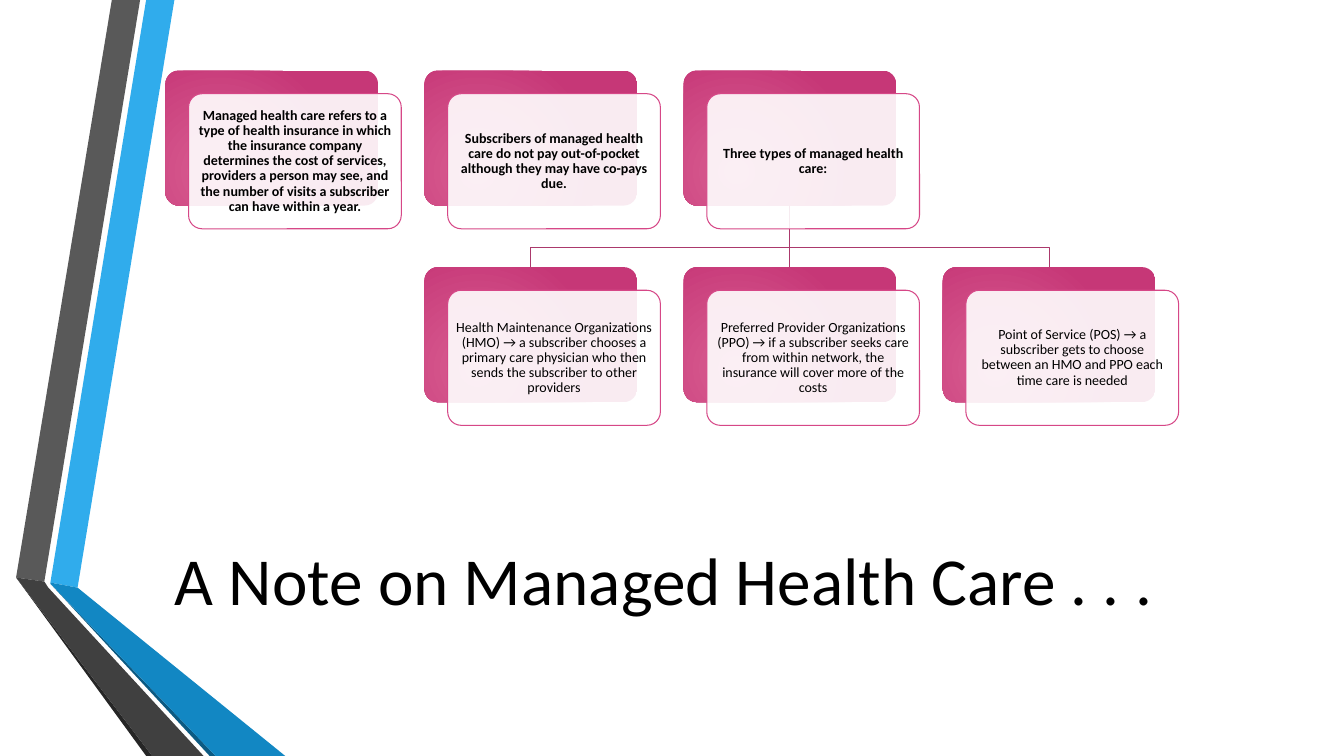
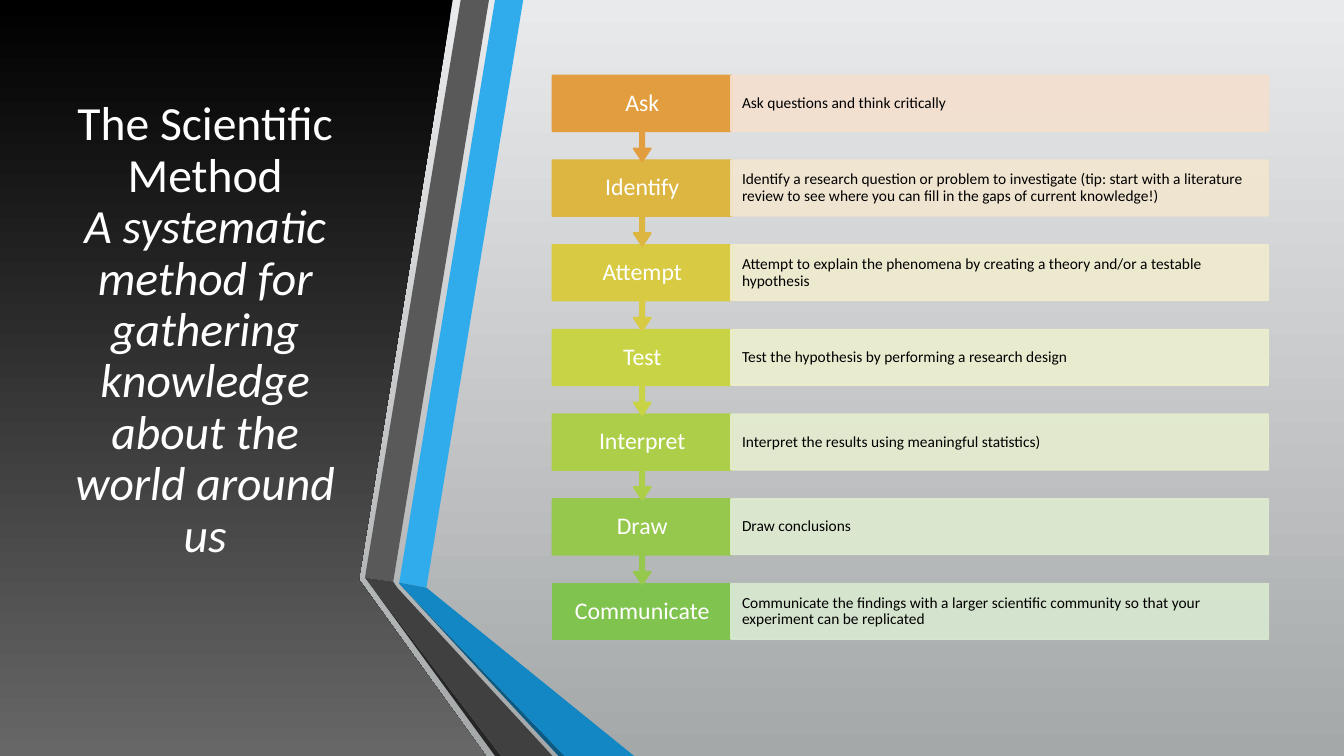
from copy import deepcopy
from dataclasses import dataclass

from lxml import etree
from pptx import Presentation
from pptx import util as u
from pptx.dml.color import RGBColor
from pptx.enum import shapes, text
from pptx.oxml import ns

FONT = "Calibri"
COLORS = {
    "black": "000000",
    "white": "FFFFFF",
    "blue": "30ACEC",
    "blue_dark": "1287C3",
    "blue_deep": "0C5A82",
    "gray": "595959",
    "gray_dark": "404040",
    "gray_deep": "262626",
    "panel_end": "676767",
    "page_top": "E9EAEB",
    "page_bottom": "A5A8A9",
    "pink_light": "D95F92",
    "pink_dark": "C63777",
    "pink_line": "D64787",
    "link": "AB396C",
}
Point = tuple[float, float]


@dataclass(frozen=True)
class Ribbon:
    color: str
    points: tuple[Point, ...]


@dataclass(frozen=True)
class Card:
    column: int
    row: int
    words: str


@dataclass(frozen=True)
class Step:
    name: str
    words: str
    color: str
    tint: str


@dataclass(frozen=True)
class Span:
    words: str
    italic: bool = False


RIBBONS = (
    Ribbon("blue", ((0.5, 5.78), (0.77, 5.83), (1.73, 0), (1.45, 0))),
    Ribbon("gray", ((1.39, 0), (1.11, 0), (0.16, 5.73), (0.44, 5.77))),
    Ribbon("gray_deep", ((0.16, 5.73), (1.45, 7.5), (1.51, 7.5))),
    Ribbon("blue_deep", ((0.5, 5.79), (2.08, 7.5), (2.14, 7.5))),
    Ribbon("blue_dark", ((0.5, 5.79), (2.14, 7.5), (2.83, 7.5), (0.77, 5.83), (0.5, 5.78))),
    Ribbon("gray_dark", ((2.02, 7.5), (0.48, 5.83), (0.44, 5.77), (0.16, 5.73), (1.51, 7.5))),
)
PANEL = ((0, 0), (4.49, 0), (3.56, 5.75), (4.82, 7.5), (0, 7.5))
RIBBON_SHIFT = 3.46

CARD_WIDTH, CARD_HEIGHT, CARD_OFFSET = 2.11, 1.34, 0.23
CARD_LEFT, CARD_TOP = 1.64, 0.7
COLUMN_PITCH, ROW_PITCH = 2.57, 1.95
BEND_Y = 2.46
CARDS = (
    Card(0, 0, "Managed health care refers to a type of health insurance in which the insurance "
               "company determines the cost of services, providers a person may see, and the "
               "number of visits a subscriber can have within a year."),
    Card(1, 0, "Subscribers of managed health care do not pay out-of-pocket although they may "
               "have co-pays due."),
    Card(2, 0, "Three types of managed health care:"),
    Card(1, 1, "Health Maintenance Organizations (HMO) → a subscriber chooses a primary care "
               "physician who then sends the subscriber to other providers"),
    Card(2, 1, "Preferred Provider Organizations (PPO) → if a subscriber seeks care from within "
               "network, the insurance will cover more of the costs"),
    Card(3, 1, "Point of Service (POS) → a subscriber gets to choose between an HMO and PPO each "
               "time care is needed"),
)

STEP_LEFT, STEP_TOP, STEP_PITCH = 5.48, 0.75, 0.84
STEP_WIDTH, STEP_HEIGHT, CALLOUT_HEIGHT = 1.78, 0.55, 0.85
DETAIL_LEFT, DETAIL_WIDTH = 7.25, 5.33
STEPS = (
    Step("Ask", "Ask questions and think critically", "E29D3E", "F4DFCE"),
    Step("Identify", "Identify a research question or problem to investigate (tip: start with a "
         "literature review to see where you can fill in the gaps of current knowledge!)",
         "DDB541", "F2E6CF"),
    Step("Attempt", "Attempt to explain the phenomena by creating a theory and/or a testable "
         "hypothesis", "D8CB43", "F1ECCF"),
    Step("Test", "Test the hypothesis by performing a research design", "C8D346", "EDEFCF"),
    Step("Interpret", "Interpret the results using meaningful statistics)", "ADCE49", "E5EDCF"),
    Step("Draw", "Draw conclusions", "95C84C", "DEEBD0"),
    Step("Communicate", "Communicate the findings with a larger scientific community so that your "
         "experiment can be replicated", "80C34F", "D8E9D0"),
)


def rgb(color: str) -> RGBColor:
    return RGBColor.from_string(COLORS.get(color, color))


def paint(fill, color: str) -> None:
    fill.solid()
    fill.fore_color.rgb = rgb(color)


def paint_gradient(fill, first: str, last: str) -> None:
    fill.gradient()
    fill.gradient_angle = 270
    for stop, color in zip(fill.gradient_stops, (first, last)):
        stop.color.rgb = rgb(color)


def make_radial(shape) -> None:
    gradient = shape.element.spPr.find(ns.qn("a:gradFill"))
    gradient.remove(gradient.find(ns.qn("a:lin")))
    radial = etree.SubElement(gradient, ns.qn("a:path"), {"path": "circle"})
    focus = {"l": "50000", "t": "100000", "r": "100000", "b": "50000"}
    etree.SubElement(radial, ns.qn("a:fillToRect"), focus)


def make_translucent(element) -> None:
    for color in element.iter(ns.qn("a:srgbClr")):
        etree.SubElement(color, ns.qn("a:alpha"), {"val": "90000"})


def draw_outline(page, points: tuple[Point, ...], closed: bool = True):
    start, *rest = [(u.Inches(x), u.Inches(y)) for x, y in points]
    builder = page.shapes.build_freeform(*start)
    builder.add_line_segments(rest, close=closed)
    outline = builder.convert_to_shape()
    outline.shadow.inherit = False
    return outline


def draw_ribbons(page, shift: float = 0) -> None:
    for ribbon in RIBBONS:
        band = draw_outline(page, tuple((x + shift, y) for x, y in ribbon.points))
        paint(band.fill, ribbon.color)
        band.line.fill.background()


def draw_box(page, preset, left: float, top: float, width: float, height: float):
    box = page.shapes.add_shape(
        preset, u.Inches(left), u.Inches(top), u.Inches(width), u.Inches(height))
    box.shadow.inherit = False
    return box


def add_span(para, words: str, size: int, color: str, bold: bool = False, italic: bool = False):
    span = para.add_run()
    span.text = words
    span.font.name = FONT
    span.font.size = u.Pt(size)
    span.font.color.rgb = rgb(color)
    span.font.bold = bold
    span.font.italic = italic
    return span


def write_box(box, words: str, size: int, color: str, side: float, edge: float,
              bold: bool = False, align=text.PP_ALIGN.CENTER) -> None:
    frame = box.text_frame
    frame.word_wrap = True
    frame.vertical_anchor = text.MSO_ANCHOR.MIDDLE
    frame.margin_left = frame.margin_right = u.Inches(side)
    frame.margin_top = frame.margin_bottom = u.Inches(edge)
    para = frame.paragraphs[0]
    para.alignment = align
    para.line_spacing = 0.9
    add_span(para, words, size, color, bold)


def set_title(page, spans: tuple[Span, ...], place: tuple[float, float, float, float],
              size: int, color: str, bottom: float = 0.05) -> None:
    title = page.shapes.title
    title.left, title.top, title.width, title.height = map(u.Inches, place)
    title.element.getparent().append(title.element)
    frame = title.text_frame
    frame.word_wrap = True
    frame.auto_size = text.MSO_AUTO_SIZE.NONE
    frame.vertical_anchor = text.MSO_ANCHOR.MIDDLE
    frame.margin_bottom = u.Inches(bottom)
    para = frame.paragraphs[0]
    para.alignment = text.PP_ALIGN.CENTER
    para.line_spacing = 0.9
    for index, part in enumerate(spans):
        if index:
            para.add_line_break()
            para._p[-1].append(deepcopy(span._r.rPr))
        span = add_span(para, part.words, size, color, italic=part.italic)


def card_corner(card: Card) -> Point:
    return CARD_LEFT + card.column * COLUMN_PITCH, CARD_TOP + card.row * ROW_PITCH


def draw_card_back(page, card: Card):
    back = draw_box(page, shapes.MSO_SHAPE.ROUNDED_RECTANGLE,
                    *card_corner(card), CARD_WIDTH, CARD_HEIGHT)
    back.adjustments[0] = 0.1
    paint_gradient(back.fill, "pink_light", "pink_dark")
    make_radial(back)
    back.line.fill.background()
    return back


def draw_card_front(page, card: Card) -> None:
    left, top = card_corner(card)
    front = draw_box(page, shapes.MSO_SHAPE.ROUNDED_RECTANGLE,
                     left + CARD_OFFSET, top + CARD_OFFSET, CARD_WIDTH, CARD_HEIGHT)
    front.adjustments[0] = 0.1
    paint(front.fill, "white")
    make_translucent(front.element.spPr)
    front.line.color.rgb = rgb("pink_line")
    front.line.width = u.Pt(0.75)
    write_box(front, card.words, 10, "black", 0.04, 0.04, bold=card.row == 0)


def draw_link(page, parent: Card, child: Card, backs: dict) -> None:
    start_x, end_x = (card_corner(card)[0] + CARD_WIDTH / 2 for card in (parent, child))
    start_y, end_y = card_corner(parent)[1] + CARD_HEIGHT, card_corner(child)[1]
    if parent.column == child.column:
        link = page.shapes.add_connector(
            shapes.MSO_CONNECTOR.STRAIGHT, u.Inches(start_x), u.Inches(start_y),
            u.Inches(end_x), u.Inches(end_y))
        link.begin_connect(backs[parent], 2)
        link.end_connect(backs[child], 0)
        etree.SubElement(link.element.spPr, ns.qn("a:effectLst"))
    else:
        corners = ((start_x, start_y), (start_x, BEND_Y), (end_x, BEND_Y), (end_x, end_y))
        link = draw_outline(page, corners, closed=False)
        link.fill.background()
    link.line.color.rgb = rgb("link")
    link.line.width = u.Pt(0.75)


def draw_step(page, index: int, step: Step) -> None:
    top = STEP_TOP + index * STEP_PITCH
    if index < len(STEPS) - 1:
        label = draw_box(page, shapes.MSO_SHAPE.DOWN_ARROW_CALLOUT,
                         STEP_LEFT, top, STEP_WIDTH, CALLOUT_HEIGHT)
        for position, value in enumerate((0.05, 0.1, 0.15, 0.65)):
            label.adjustments[position] = value
    else:
        label = draw_box(page, shapes.MSO_SHAPE.RECTANGLE,
                         STEP_LEFT, top, STEP_WIDTH, STEP_HEIGHT)
    detail = draw_box(page, shapes.MSO_SHAPE.RECTANGLE,
                      DETAIL_LEFT, top, DETAIL_WIDTH, STEP_HEIGHT)
    for box, color in ((label, step.color), (detail, step.tint)):
        paint(box.fill, color)
        box.line.color.rgb = rgb(color)
        box.line.width = u.Pt(1.25)
    make_translucent(detail.element.spPr)
    write_box(label, step.name, 17, "white", 0.13, 0.13)
    write_box(detail, step.words, 11, "black", 0.11, 0.15, align=text.PP_ALIGN.LEFT)


def build_care_page(page) -> None:
    paint(page.background.fill, "white")
    draw_ribbons(page)
    set_title(page, (Span("A Note on Managed Health Care . . . "),),
              (1, 4.9, 11.32, 1.79), 48, "black")
    backs = {card: draw_card_back(page, card) for card in CARDS}
    for child in CARDS[3:]:
        draw_link(page, CARDS[2], child, backs)
    for card in CARDS:
        draw_card_front(page, card)


def build_method_page(page) -> None:
    paint_gradient(page.background.fill, "page_top", "page_bottom")
    panel = draw_outline(page, PANEL)
    paint_gradient(panel.fill, "black", "panel_end")
    panel.line.fill.background()
    draw_ribbons(page, RIBBON_SHIFT)
    spans = (Span("The Scientific Method"),
             Span("A systematic method for gathering knowledge about the world around us", True))
    set_title(page, spans, (0.59, 0.75, 2.89, 5.58), 34, "white", bottom=0.56)
    for index, step in reversed(list(enumerate(STEPS))):
        draw_step(page, index, step)


def main() -> None:
    deck = Presentation()
    deck.slide_width, deck.slide_height = u.Inches(13.33), u.Inches(7.5)
    for build in (build_care_page, build_method_page):
        build(deck.slides.add_slide(deck.slide_layouts[5]))
    deck.save("out.pptx")


if __name__ == "__main__":
    main()
